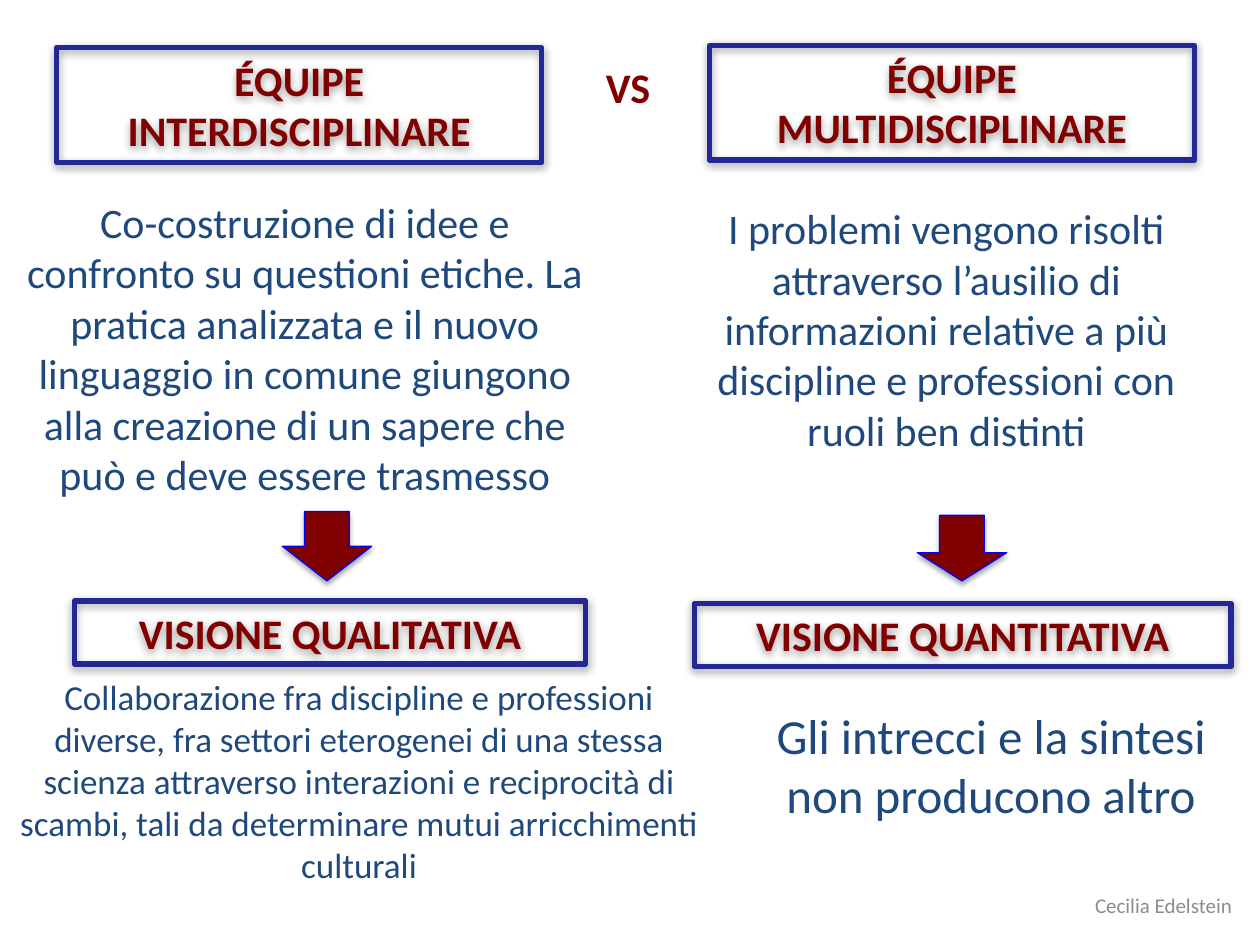
from dataclasses import dataclass

from lxml.etree import SubElement
from pptx import Presentation
from pptx.dml.color import RGBColor
from pptx.enum.shapes import MSO_SHAPE as Preset
from pptx.enum.text import MSO_ANCHOR as Anchor, PP_ALIGN as Align
from pptx.oxml.ns import qn
from pptx.util import Emu, Pt

PX = 9144  # EMU per px, 100 px to the inch
FONT = "Calibri"
MAROON, NAVY, BLUE, TEXT_BLUE, GREY = "800000", "232894", "0000FF", "1F497D", "8C8C8C"


@dataclass(frozen=True)
class Area:
    left: int
    top: int
    width: int
    height: int

    def emu(self) -> list[Emu]:
        return [Emu(n * PX) for n in (self.left, self.top, self.width, self.height)]


@dataclass(frozen=True)
class Heading:
    area: Area
    text: str


@dataclass(frozen=True)
class Passage:
    area: Area
    text: str
    size: int = 24
    color: str = TEXT_BLUE
    bold: bool = False
    anchor: Anchor = Anchor.TOP


@dataclass(frozen=True)
class Arrow:
    area: Area
    head: float = 0.5


def rgb(color: str) -> RGBColor:
    return RGBColor.from_string(color)


def write(shape, text: str, size: int, color: str, bold: bool, anchor: Anchor) -> None:
    frame = shape.text_frame
    frame.word_wrap = True
    frame.vertical_anchor = anchor
    paragraph = frame.paragraphs[0]
    paragraph.alignment = Align.CENTER
    run = paragraph.add_run()
    run.text = text
    run.font.name = FONT
    run.font.size = Pt(size)
    run.font.bold = bold
    run.font.color.rgb = rgb(color)


def cast_shadow(shape, blur: float, distance: float, opacity: int) -> None:
    shape.shadow.inherit = False
    effects = shape._element.spPr.find(qn("a:effectLst"))
    outer = SubElement(effects, qn("a:outerShdw"), blurRad=str(Pt(blur)),
                       dist=str(Pt(distance)), dir="5400000", rotWithShape="0")
    black = SubElement(outer, qn("a:srgbClr"), val="000000")
    SubElement(black, qn("a:alpha"), val=str(opacity * 1000))


def draw_heading(slide, heading: Heading) -> None:
    frame = slide.shapes.add_shape(Preset.RECTANGLE, *heading.area.emu())
    frame.fill.background()
    frame.line.color.rgb = rgb(NAVY)
    frame.line.width = Pt(3)
    cast_shadow(frame, 5, 1.6, 38)
    write(frame, heading.text, 24, MAROON, True, Anchor.TOP)


def draw_passage(slide, passage: Passage) -> None:
    box = slide.shapes.add_textbox(*passage.area.emu())
    write(box, passage.text, passage.size, passage.color, passage.bold, passage.anchor)


def draw_arrow(slide, arrow: Arrow) -> None:
    pointer = slide.shapes.add_shape(Preset.DOWN_ARROW, *arrow.area.emu())
    pointer.adjustments[1] = arrow.head
    pointer.fill.solid()
    pointer.fill.fore_color.rgb = rgb(MAROON)
    pointer.line.color.rgb = rgb(BLUE)
    pointer.line.width = Pt(0.75)
    cast_shadow(pointer, 3.1, 1.8, 35)


HEADINGS = [
    Heading(Area(45, 38, 385, 91), "ÉQUIPE INTERDISCIPLINARE"),
    Heading(Area(563, 36, 385, 91), "ÉQUIPE MULTIDISCIPLINARE"),
    Heading(Area(59, 477, 406, 50), "VISIONE QUALITATIVA"),
    Heading(Area(551, 479, 426, 50), "VISIONE QUANTITATIVA"),
]

PASSAGES = [
    Passage(Area(461, 44, 75, 51), "VS", color=MAROON, bold=True),
    Passage(Area(0, 151, 484, 288),
            "Co-costruzione di idee e confronto su questioni etiche. La pratica analizzata "
            "e il nuovo linguaggio in comune giungono alla creazione di un sapere che può "
            "e deve essere trasmesso"),
    Passage(Area(547, 156, 408, 212),
            "I problemi vengono risolti attraverso l’ausilio di informazioni relative a più "
            "discipline e professioni con ruoli ben distinti"),
    Passage(Area(0, 531, 570, 226),
            "Collaborazione fra discipline e professioni diverse, fra settori eterogenei di "
            "una stessa scienza attraverso interazioni e reciprocità di scambi, tali da "
            "determinare mutui arricchimenti culturali", size=20),
    Passage(Area(602, 555, 369, 104),
            "Gli intrecci e la sintesi non producono altro", size=28),
    Passage(Area(847, 706, 153, 24), "Cecilia Edelstein", size=12, color=GREY,
            anchor=Anchor.MIDDLE),
]

ARROWS = [
    Arrow(Area(224, 406, 71, 55)),
    Arrow(Area(728, 409, 71, 52), head=0.43),
]


def main() -> None:
    deck = Presentation()
    deck.slide_width, deck.slide_height = Emu(1000 * PX), Emu(750 * PX)
    slide = deck.slides.add_slide(deck.slide_layouts[6])

    # Team and vision headings
    for heading in HEADINGS:
        draw_heading(slide, heading)
    # Descriptions, the "VS" between the teams, and the author
    for passage in PASSAGES:
        draw_passage(slide, passage)
    # Arrows from each team to its vision
    for arrow in ARROWS:
        draw_arrow(slide, arrow)

    deck.save("out.pptx")


if __name__ == "__main__":
    main()
